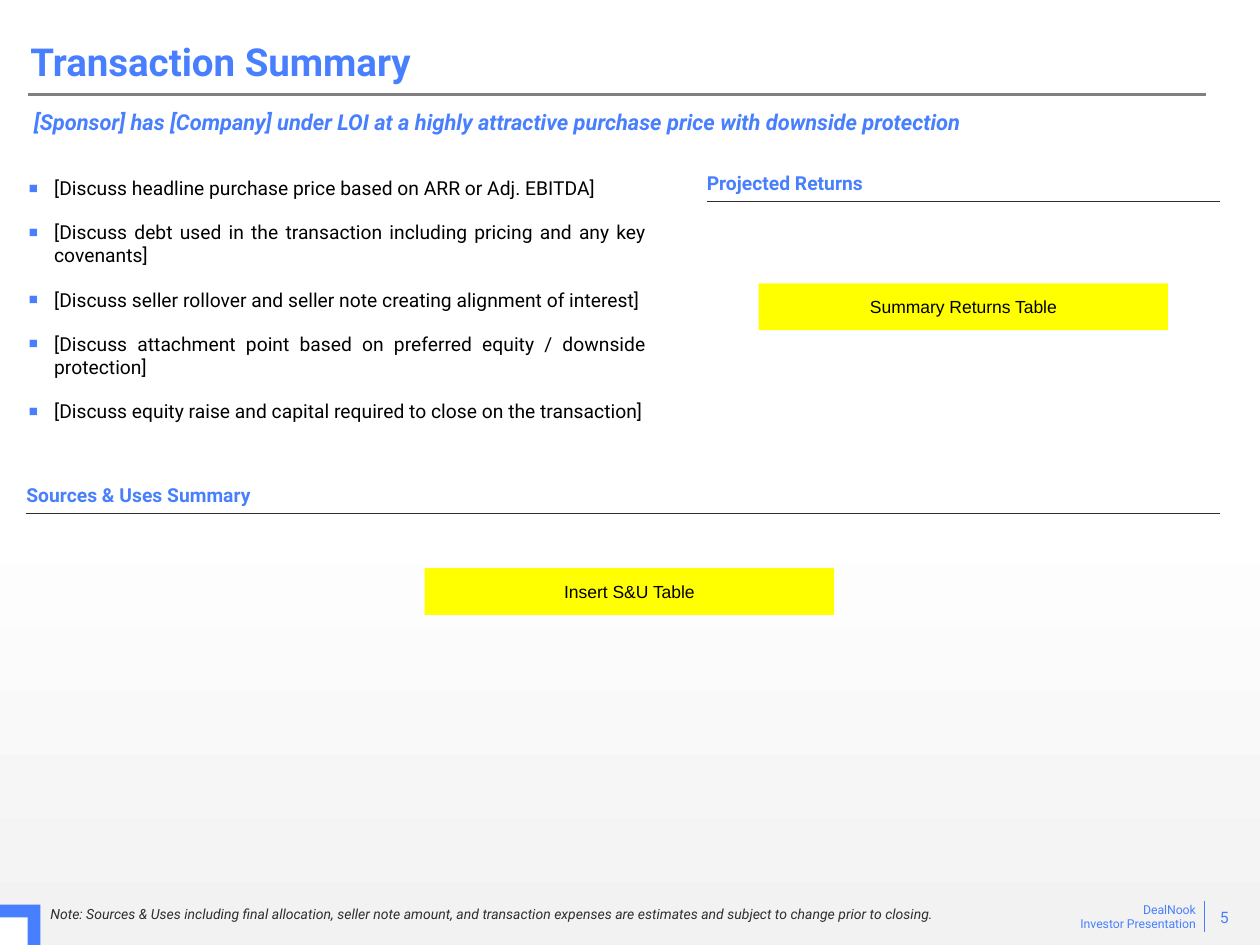
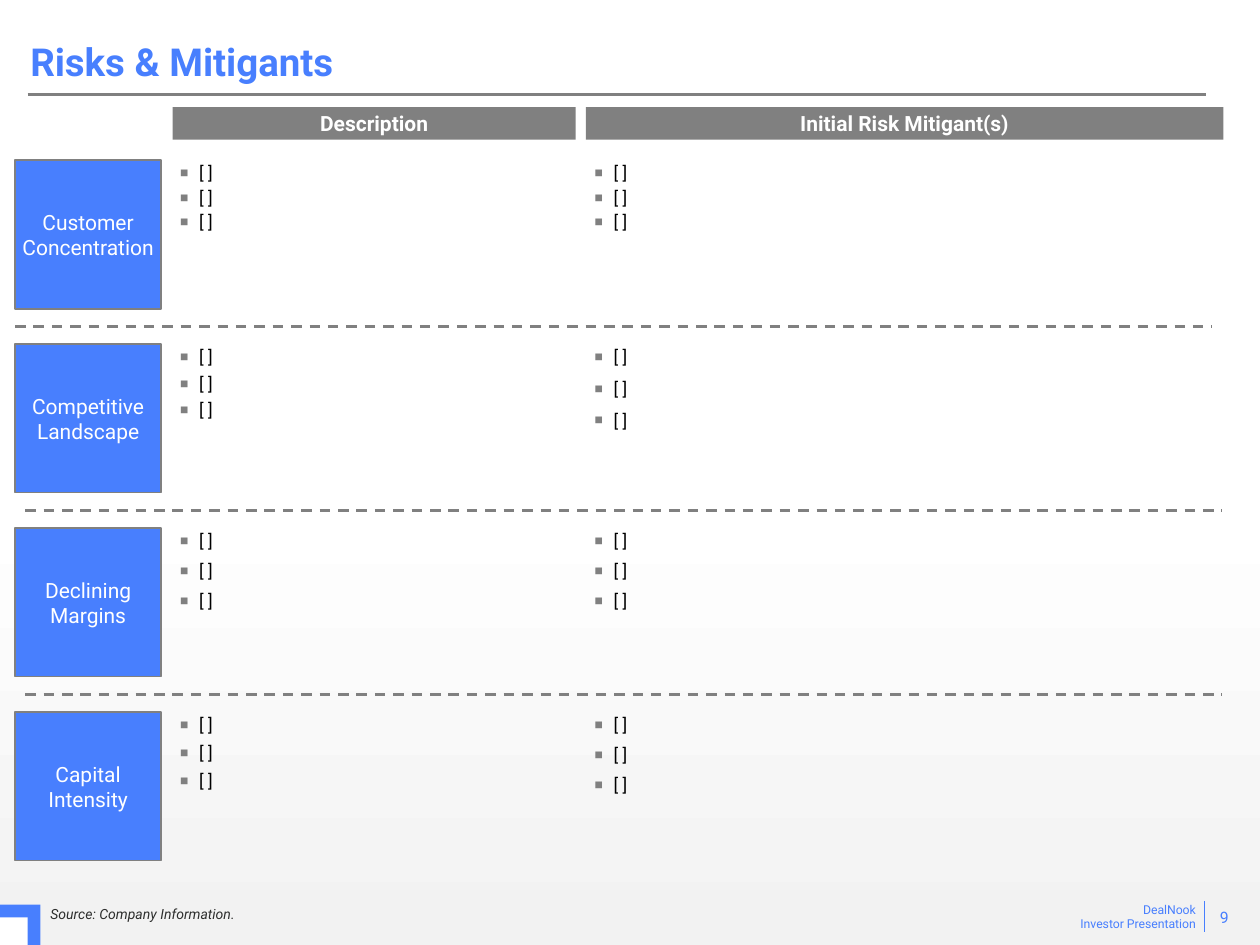
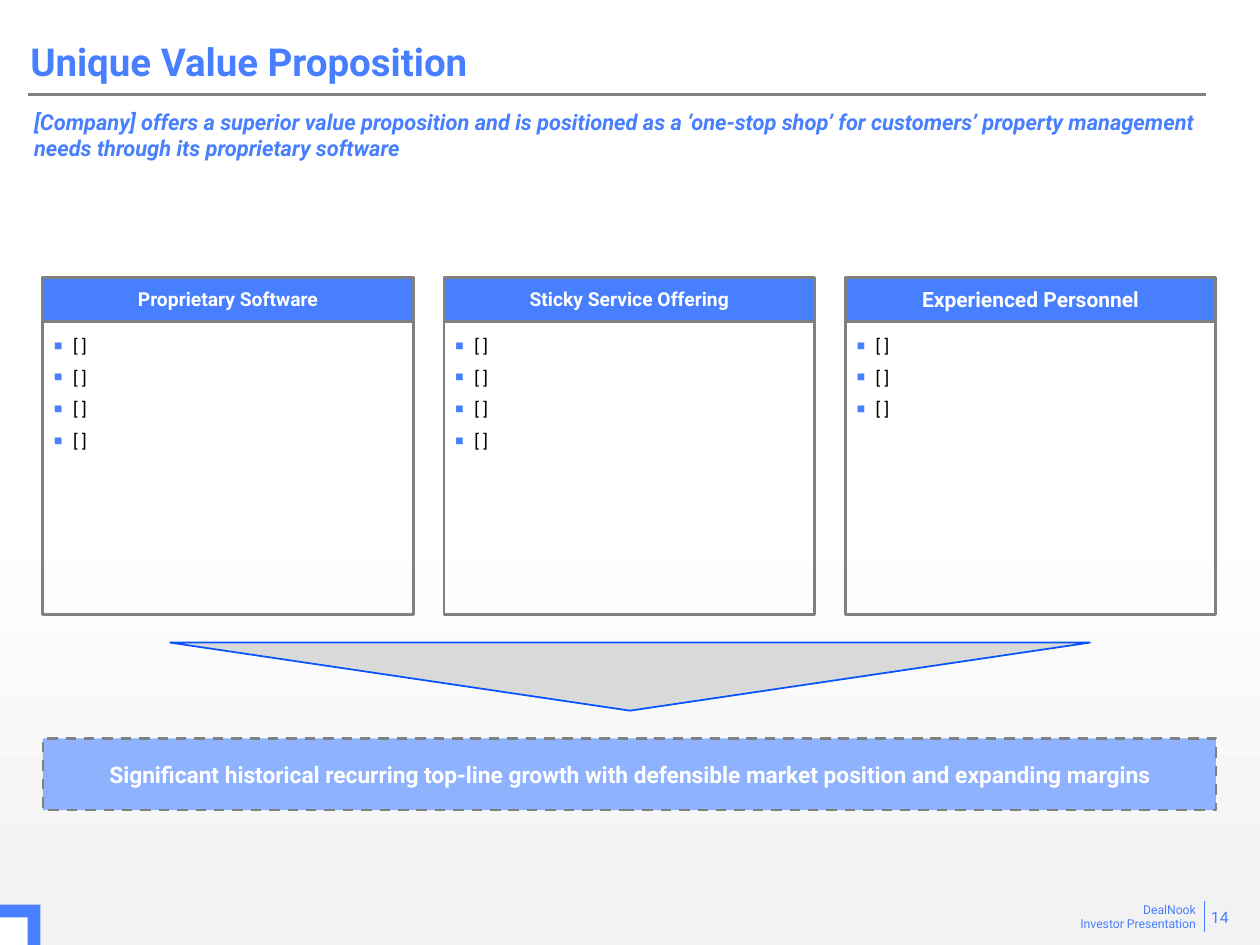
"""Build three investor presentation pages with a shared frame."""
from copy import deepcopy
from dataclasses import dataclass
from typing import Any, Optional, Sequence

from lxml import etree
from pptx import Presentation
from pptx import util as u
from pptx.dml.color import RGBColor
from pptx.enum import dml, shapes, text
from pptx.oxml import ns


@dataclass(frozen=True)
class Theme:
    """Colours, fonts and type sizes of the deck."""
    blue: str = "487FFE"
    deep_blue: str = "0653FE"
    pale_blue: str = "8FB2FF"
    gray: str = "808080"
    light_gray: str = "D9D9D9"
    backdrop: str = "F2F2F2"
    yellow: str = "FFFF00"
    ink: str = "2D2E2D"
    black: str = "000000"
    white: str = "FFFFFF"
    font: str = "Roboto"
    plain_font: str = "Arial"
    title: float = 22
    banner: float = 13
    subtitle: float = 12.5
    label: float = 12
    heading: float = 11
    body: float = 10
    number: float = 9
    note: float = 8
    footer: float = 7


@dataclass(frozen=True)
class Box:
    """A place on the page in inches."""
    left: float
    top: float
    width: float
    height: float

    def lengths(self) -> list:
        """Return the four lengths for python-pptx."""
        return [u.Inches(n) for n in (self.left, self.top, self.width, self.height)]


@dataclass(frozen=True)
class Bullet:
    """Bullet colour, indents and paragraph spacing."""
    color: str
    before: float
    after: float
    margin: float = 0.2
    hanging: float = 0.15


@dataclass(frozen=True)
class Risk:
    """A risk with the bullet spacing of its two columns."""
    name: str
    description: tuple
    mitigants: tuple


@dataclass(frozen=True)
class Card:
    """A value card with its bullet count and heading size."""
    name: str
    count: int
    size: float


THEME = Theme()
LEFT, CENTER, RIGHT, JUSTIFY = (
    text.PP_ALIGN.LEFT, text.PP_ALIGN.CENTER, text.PP_ALIGN.RIGHT, text.PP_ALIGN.JUSTIFY)
TOP, MIDDLE, BOTTOM = (
    text.MSO_ANCHOR.TOP, text.MSO_ANCHOR.MIDDLE, text.MSO_ANCHOR.BOTTOM)
RECTANGLE = shapes.MSO_SHAPE.RECTANGLE
DASH = dml.MSO_LINE.DASH
INSETS = (0.1, 0.05, 0.1, 0.05)
BULLET_INSETS = (0, 0.01, 0, 0)
EMPTY_ITEM = "[ ]"

TERMS = [
    "[Discuss headline purchase price based on ARR or Adj. EBITDA]",
    "[Discuss debt used in the transaction including pricing and any key covenants]",
    "[Discuss seller rollover and seller note creating alignment of interest]",
    "[Discuss attachment point based on preferred equity / downside protection]",
    "[Discuss equity raise and capital required to close on the transaction]",
]
RISKS = [
    Risk("Customer Concentration", (1, 1), (1, 1)),
    Risk("Competitive Landscape", (1, 2), (3, 3)),
    Risk("Declining Margins", (3, 2), (1, 4)),
    Risk("Capital Intensity", (2, 2), (3, 2)),
]
CARDS = [
    Card("Proprietary Software", 4, THEME.heading),
    Card("Sticky Service Offering", 4, THEME.heading),
    Card("Experienced Personnel", 3, THEME.label),
]


def rgb(color: str) -> RGBColor:
    """Turn a hex string into a colour."""
    return RGBColor.from_string(color)


def add_bullet(para: Any, bullet: Bullet) -> None:
    """Give a paragraph a square bullet and its spacing."""
    para.space_before, para.space_after = u.Pt(bullet.before), u.Pt(bullet.after)
    props = para._p.get_or_add_pPr()
    props.set("marL", str(u.Inches(bullet.margin)))
    props.set("indent", str(-u.Inches(bullet.hanging)))
    tint = etree.SubElement(props, ns.qn("a:buClr"))
    etree.SubElement(tint, ns.qn("a:srgbClr"), val=bullet.color)
    etree.SubElement(props, ns.qn("a:buSzPct"), val="79000")
    etree.SubElement(props, ns.qn("a:buFont"), typeface=THEME.plain_font)
    etree.SubElement(props, ns.qn("a:buChar"), char="■")


def write(shape: Any, lines: Sequence[str], *, size: float, color: str = THEME.blue,
          font: str = THEME.font, bold: bool = False, italic: bool = False,
          align: Any = LEFT, anchor: Any = TOP, insets: Sequence[float] = INSETS,
          bullet: Optional[Bullet] = None, before: float = 0,
          spacing: Optional[float] = None) -> None:
    """Fill a shape with formatted paragraphs."""
    frame = shape.text_frame
    frame.word_wrap = True
    frame.auto_size = text.MSO_AUTO_SIZE.NONE
    frame.vertical_anchor = anchor
    (frame.margin_left, frame.margin_top,
     frame.margin_right, frame.margin_bottom) = [u.Inches(n) for n in insets]
    for index, line in enumerate(lines):
        para = frame.paragraphs[0] if index == 0 else frame.add_paragraph()
        para.alignment = align
        para.space_before = u.Pt(before)
        if spacing:
            para.line_spacing = spacing
        if bullet:
            add_bullet(para, bullet)
        span = para.add_run()
        span.text = line
        span.font.name, span.font.size = font, u.Pt(size)
        span.font.bold, span.font.italic = bold, italic
        span.font.color.rgb = rgb(color)


def add_text(page: Any, box: Box, lines: Sequence[str], **style: Any) -> None:
    """Add a text box."""
    write(page.shapes.add_textbox(*box.lengths()), lines, **style)


def add_block(page: Any, box: Box, *, kind: Any = RECTANGLE, fill: Optional[str] = None,
              line: Optional[str] = None, weight: float = 1.5, dash: Any = None) -> Any:
    """Add a flat preset shape."""
    shape = page.shapes.add_shape(kind, *box.lengths())
    shape.shadow.inherit = False
    if fill:
        shape.fill.solid()
        shape.fill.fore_color.rgb = rgb(fill)
    else:
        shape.fill.background()
    if line:
        shape.line.color.rgb = rgb(line)
        shape.line.width = u.Pt(weight)
        if dash:
            shape.line.dash_style = dash
    else:
        shape.line.fill.background()
    return shape


def add_label(page: Any, box: Box, words: str, *, fill: str, size: float,
              line: Optional[str] = None, weight: float = 1.5, dash: Any = None,
              color: str = THEME.white, **style: Any) -> None:
    """Add a filled rectangle with centred text."""
    shape = add_block(page, box, fill=fill, line=line, weight=weight, dash=dash)
    write(shape, [words], size=size, color=color, align=CENTER, anchor=MIDDLE, **style)


def add_rule(page: Any, start: tuple, end: tuple, *, color: str = THEME.gray,
             weight: float = 1.5, dash: Any = None) -> None:
    """Add a straight line."""
    points = [u.Inches(n) for n in (*start, *end)]
    rule = page.shapes.add_connector(shapes.MSO_CONNECTOR.STRAIGHT, *points)
    rule.line.color.rgb = rgb(color)
    rule.line.width = u.Pt(weight)
    if dash:
        rule.line.dash_style = dash
    etree.SubElement(rule._element.spPr, ns.qn("a:effectLst"))


def add_heading(page: Any, box: Box, words: str) -> None:
    """Add a section heading underlined by a callout line."""
    shape = add_block(page, box, kind=shapes.MSO_SHAPE.LINE_CALLOUT_1_NO_BORDER,
                      line=THEME.ink, weight=0.5)
    for index, value in enumerate((0.958, 0, 0.958, 1)):
        shape.adjustments[index] = value
    write(shape, [words], size=THEME.heading, bold=True, align=JUSTIFY,
          anchor=BOTTOM, insets=(0, 0, 0, 0.07))


def add_placeholder_note(page: Any, left: float, top: float, words: str) -> None:
    """Mark in yellow where a table belongs."""
    add_label(page, Box(left, top, 3.25, 0.37), words, fill=THEME.yellow,
              size=THEME.body, color=THEME.black, font=THEME.plain_font)


def add_subtitle(page: Any, words: str, width: float) -> None:
    """Add the key message below the title."""
    add_text(page, Box(0.24, 0.86, width, 0.49), [words], size=THEME.subtitle,
             bold=True, italic=True, insets=(0.03, 0, 0, 0), before=2.5)


def add_note(page: Any, words: str) -> None:
    """Add the note at the foot of the page."""
    add_text(page, Box(0.4, 7.18, 7.34, 0.14), [words], size=THEME.note,
             color=THEME.ink, italic=True, anchor=BOTTOM, insets=(0, 0, 0, 0))


def paint_background(deck: Any) -> None:
    """Set the gradient shared by all pages."""
    master = deck.slide_master
    fill = master.background.fill
    fill.gradient()
    fill.gradient_angle = 270
    stops = master.element.find(".//" + ns.qn("a:gsLst"))
    stops.insert(0, deepcopy(stops[0]))
    colors = (THEME.white, THEME.white, THEME.backdrop)
    for stop, place, color in zip(fill.gradient_stops, (0, 0.53, 1), colors):
        stop.position = place
        stop.color.rgb = rgb(color)


def add_page(deck: Any, title: str, number: int) -> Any:
    """Add a page with title, rule, corner mark and footer."""
    page = deck.slides.add_slide(deck.slide_layouts[5])
    add_text(page, Box(8.43, 7.11, 1.16, 0.34), ["DealNook", "Investor Presentation"],
             size=THEME.footer, align=RIGHT)
    add_rule(page, (9.56, 7.15), (9.56, 7.4), color=THEME.blue, weight=0.5)
    add_rule(page, (0.22, 0.75), (9.57, 0.75))
    corner = page.shapes.add_group_shape()
    add_block(corner, Box(0, 7.18, 0.32, 0.32), fill=THEME.blue)
    add_block(corner, Box(0, 7.28, 0.22, 0.22), fill=THEME.white)
    heading = page.shapes.title
    heading.left, heading.top, heading.width, heading.height = Box(
        0.14, 0.25, 7.88, 0.47).lengths()
    write(heading, [title], size=THEME.title, bold=True, anchor=BOTTOM, spacing=0.9)
    add_text(page, Box(9.1, 7.16, 0.75, 0.24), [str(number)], size=THEME.number,
             align=RIGHT, anchor=MIDDLE)
    return page


def build_summary(deck: Any) -> None:
    """Build the transaction summary."""
    page = add_page(deck, "Transaction Summary", 5)
    add_text(page, Box(0.22, 1.39, 4.91, 1.98), TERMS, size=THEME.heading,
             color=THEME.black, align=JUSTIFY, insets=BULLET_INSETS,
             bullet=Bullet(THEME.blue, 6, 6, margin=0.21, hanging=0.2))
    add_subtitle(page, "[Sponsor] has [Company] under LOI at a highly attractive "
                 "purchase price with downside protection", 9.44)
    add_note(page, "Note: Sources & Uses including final allocation, seller note amount, "
             "and transaction expenses are estimates and subject to change prior to closing.")
    add_heading(page, Box(0.21, 3.8, 9.47, 0.29), "Sources & Uses Summary")
    add_placeholder_note(page, 3.37, 4.51, "Insert S&U Table")
    add_heading(page, Box(5.61, 1.32, 4.07, 0.29), "Projected Returns")
    add_placeholder_note(page, 6.02, 2.25, "Summary Returns Table")


def build_risks(deck: Any) -> None:
    """Build the grid of risks and mitigants."""
    page = add_page(deck, "Risks & Mitigants", 9)
    for left, width, words in ((1.37, 3.2, "Description"),
                               (4.65, 5.06, "Initial Risk Mitigant(s)")):
        add_label(page, Box(left, 0.85, width, 0.26), words, fill=THEME.gray,
                  size=THEME.label, bold=True)
    for row, risk in enumerate(RISKS):
        top = 1.27 + 1.46 * row
        add_label(page, Box(0.12, top, 1.16, 1.18), risk.name, fill=THEME.blue,
                  size=THEME.label, line=THEME.gray, weight=1,
                  insets=(0.02, 0.05, 0.02, 0.05))
        for left, width, gaps in ((1.38, 3.12, risk.description),
                                  (4.67, 5.04, risk.mitigants)):
            add_text(page, Box(left, top + 0.01, width, 0.66), [EMPTY_ITEM] * 3,
                     size=THEME.body, color=THEME.black, align=JUSTIFY,
                     insets=BULLET_INSETS, bullet=Bullet(THEME.gray, *gaps))
        if row < len(RISKS) - 1:
            start = 0.2 if row else 0.12
            add_rule(page, (start, top + 1.32), (start + 9.5, top + 1.32), dash=DASH)
    add_note(page, "Source: Company Information.")


def build_value(deck: Any) -> None:
    """Build the value proposition cards and conclusion."""
    page = add_page(deck, "Unique Value Proposition", 14)
    add_subtitle(page, "[Company] offers a superior value proposition and is positioned as a "
                 "‘one-stop shop’ for customers’ property management needs through its "
                 "proprietary software", 9.62)
    margin, span, width = 0.34, 9.31, 2.94
    pitch = (span - width) / (len(CARDS) - 1)
    for index, card in enumerate(CARDS):
        left = margin + index * pitch
        add_label(page, Box(left, 2.2, width, 0.35), card.name, fill=THEME.blue,
                  size=card.size, line=THEME.gray, bold=True)
        add_block(page, Box(left, 2.55, width, 2.33), line=THEME.gray)
        add_text(page, Box(left + 0.04, 2.65, 2.85, 0.94), [EMPTY_ITEM] * card.count,
                 size=THEME.body, color=THEME.black, insets=BULLET_INSETS,
                 bullet=Bullet(THEME.blue, 4, 2))
    add_label(page, Box(margin, 5.86, span, 0.57),
              "Significant historical recurring top-line growth with defensible market "
              "position and expanding margins", fill=THEME.pale_blue, size=THEME.banner,
              line=THEME.gray, dash=DASH, bold=True)
    arrow = add_block(page, Box(1.35, 5.1, 7.3, 0.54),
                      kind=shapes.MSO_SHAPE.ISOSCELES_TRIANGLE,
                      fill=THEME.light_gray, line=THEME.deep_blue, weight=1)
    arrow.rotation = 180


def main() -> None:
    """Build and save the deck."""
    deck = Presentation()
    deck.slide_width, deck.slide_height = u.Inches(10), u.Inches(7.5)
    paint_background(deck)
    build_summary(deck)
    build_risks(deck)
    build_value(deck)
    deck.save("out.pptx")


if __name__ == "__main__":
    main()
